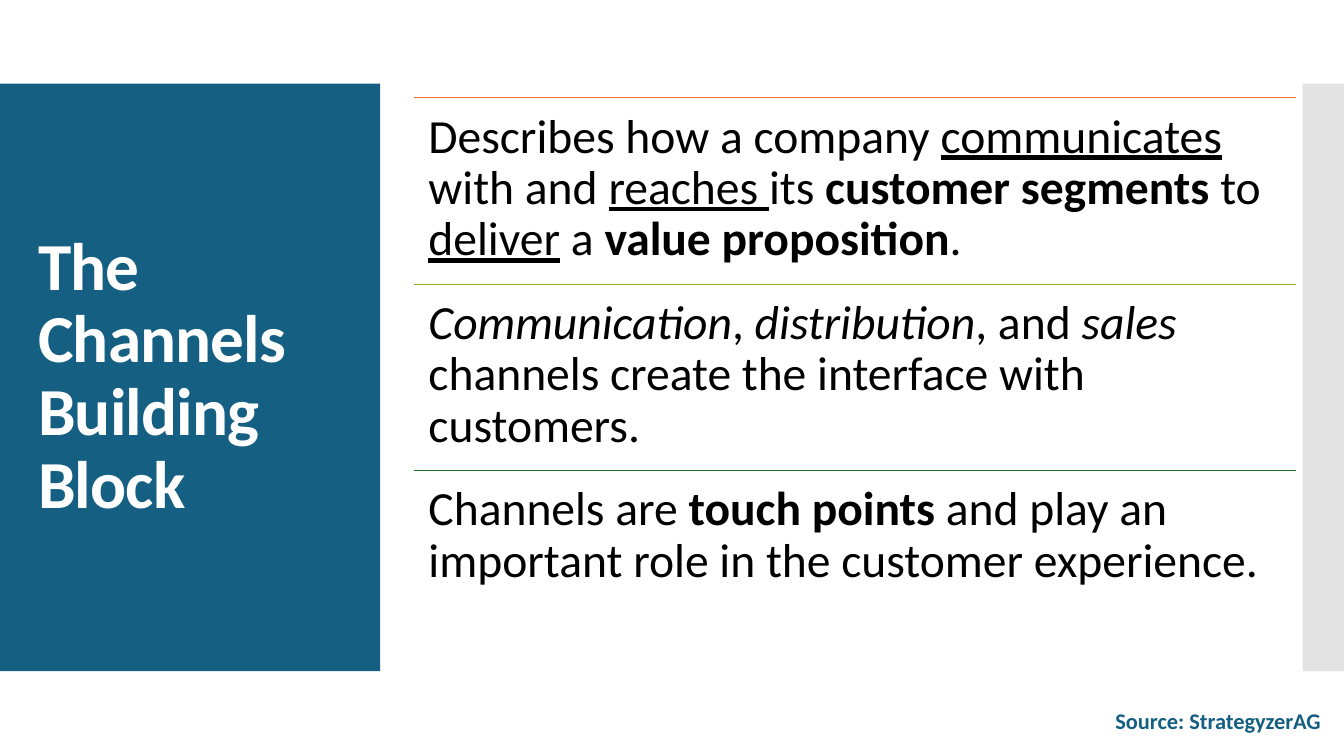
from lxml.etree import SubElement
from pptx import Presentation
from pptx.dml.color import RGBColor
from pptx.enum.shapes import MSO_CONNECTOR, MSO_SHAPE
from pptx.enum.text import MSO_ANCHOR, PP_ALIGN
from pptx.oxml.ns import qn
from pptx.util import Emu, Pt

PX = 9144
COLORS = {
    "teal": "156082",
    "gray": "C8C8C8",
    "white": "FFFFFF",
    "black": "000000",
    "orange": "E97132",
    "lime": "8EB21E",
    "green": "196B24",
}
STATEMENTS = [
    ("orange", [
        ("Describes how a company ", ""),
        ("communicates ", "underline"),
        ("with and ", ""),
        ("reaches ", "underline"),
        ("its ", ""),
        ("customer segments ", "bold"),
        ("to ", ""),
        ("deliver", "underline"),
        (" a ", ""),
        ("value proposition", "bold"),
        (".", ""),
    ]),
    ("lime", [
        ("Communication", "italic"),
        (", ", ""),
        ("distribution", "italic"),
        (", and ", ""),
        ("sales", "italic"),
        (" channels create the interface with customers.", ""),
    ]),
    ("green", [
        ("Channels are ", ""),
        ("touch points ", "bold"),
        ("and play an important role in the customer experience.", ""),
    ]),
]
STATEMENT_LEFT, STATEMENT_TOP = 411, 97
STATEMENT_WIDTH, STATEMENT_HEIGHT = 874, 185


def px(*lengths):
    return [Emu(length * PX) for length in lengths]


def color(name):
    return RGBColor.from_string(COLORS[name])


def add_band(slide, left, width, fill, opacity=100):
    shape = slide.shapes.add_shape(MSO_SHAPE.RECTANGLE, *px(left, 83, width, 583))
    shape.shadow.inherit = False
    shape.fill.solid()
    shape.fill.fore_color.rgb = color(fill)
    shape.line.fill.background()
    if opacity < 100:
        fill_color = shape._element.spPr.find(qn("a:solidFill"))[0]
        SubElement(fill_color, qn("a:alpha"), val=str(opacity * 1000))


def add_rule(slide, left, top, width, line_color):
    connector = slide.shapes.add_connector(
        MSO_CONNECTOR.STRAIGHT, *px(left, top, left + width, top))
    connector.line.color.rgb = color(line_color)
    connector.line.width = Pt(0.75)
    SubElement(connector._element.spPr, qn("a:effectLst"))


def add_text(slide, box, runs, *, size, text_color="black", bold=False, margins=(10, 5),
             anchor=MSO_ANCHOR.TOP, align=PP_ALIGN.LEFT, tracking=0):
    frame = slide.shapes.add_textbox(*px(*box)).text_frame
    frame.word_wrap = True
    frame.vertical_anchor = anchor
    frame.margin_left, frame.margin_top = px(*margins)
    frame.margin_right, frame.margin_bottom = px(*margins)
    paragraph = frame.paragraphs[0]
    paragraph.alignment = align
    paragraph.line_spacing = 0.9
    for text, style in runs:
        run = paragraph.add_run()
        run.text = text
        run.font.name = "Calibri"
        run.font.size = Pt(size)
        run.font.color.rgb = color(text_color)
        run.font.bold = bold or style == "bold"
        run.font.italic = style == "italic"
        run.font.underline = style == "underline"
        if tracking:
            run._r.get_or_add_rPr().set("spc", str(tracking))


def add_statement(slide, index, line_color, runs):
    top = STATEMENT_TOP + index * STATEMENT_HEIGHT
    add_rule(slide, STATEMENT_LEFT, top, STATEMENT_WIDTH, line_color)
    add_text(slide, (STATEMENT_LEFT, top, STATEMENT_WIDTH, STATEMENT_HEIGHT), runs,
             size=34, margins=(14, 14))


def main():
    presentation = Presentation()
    presentation.slide_width, presentation.slide_height = px(1333, 750)
    slide = presentation.slides.add_slide(presentation.slide_layouts[6])
    add_band(slide, 0, 377, "teal")
    add_band(slide, 1292, 41, "gray", opacity=50)
    add_text(slide, (28, 123, 322, 503), [("The Channels Building Block", "")],
             size=48, text_color="white", bold=True, anchor=MSO_ANCHOR.MIDDLE, tracking=-60)
    for index, (line_color, runs) in enumerate(STATEMENTS):
        add_statement(slide, index, line_color, runs)
    add_text(slide, (207, 700, 1113, 42), [("Source: StrategyzerAG", "")],
             size=16, text_color="teal", bold=True, align=PP_ALIGN.RIGHT)
    presentation.save("out.pptx")


if __name__ == "__main__":
    main()
